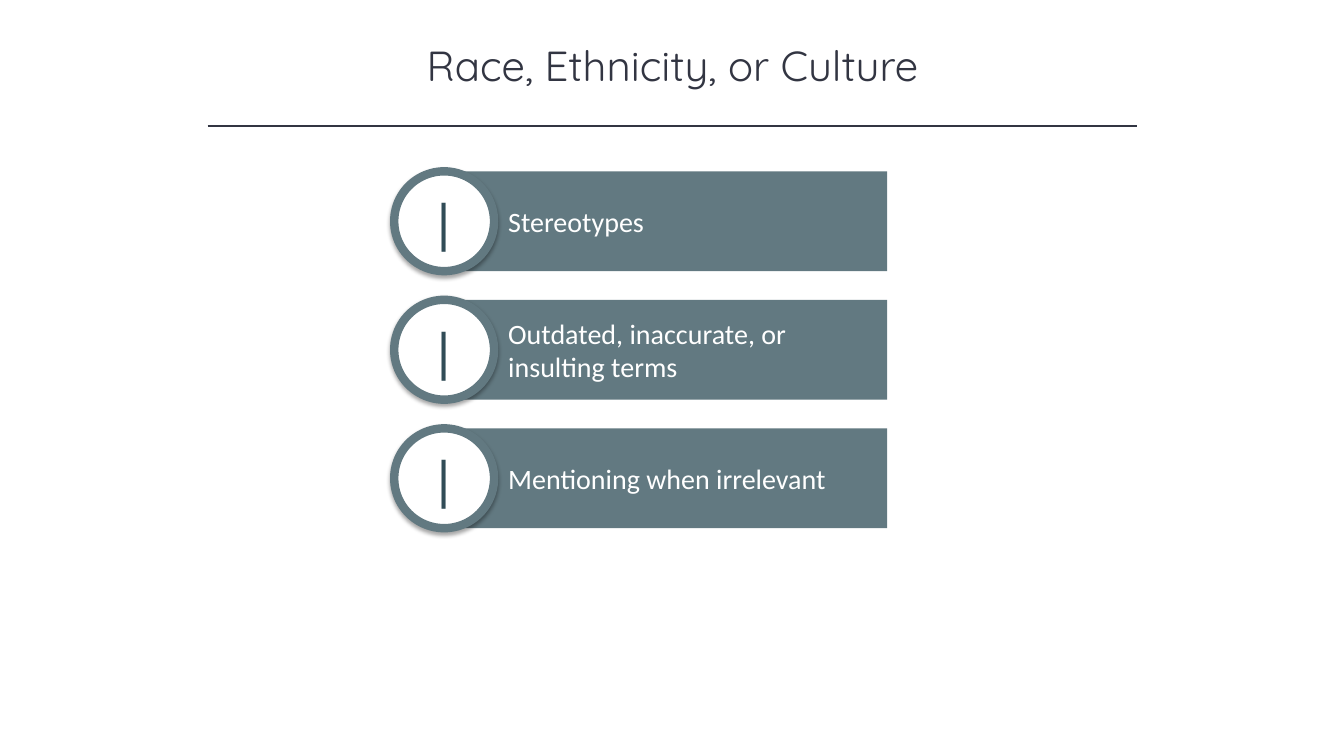
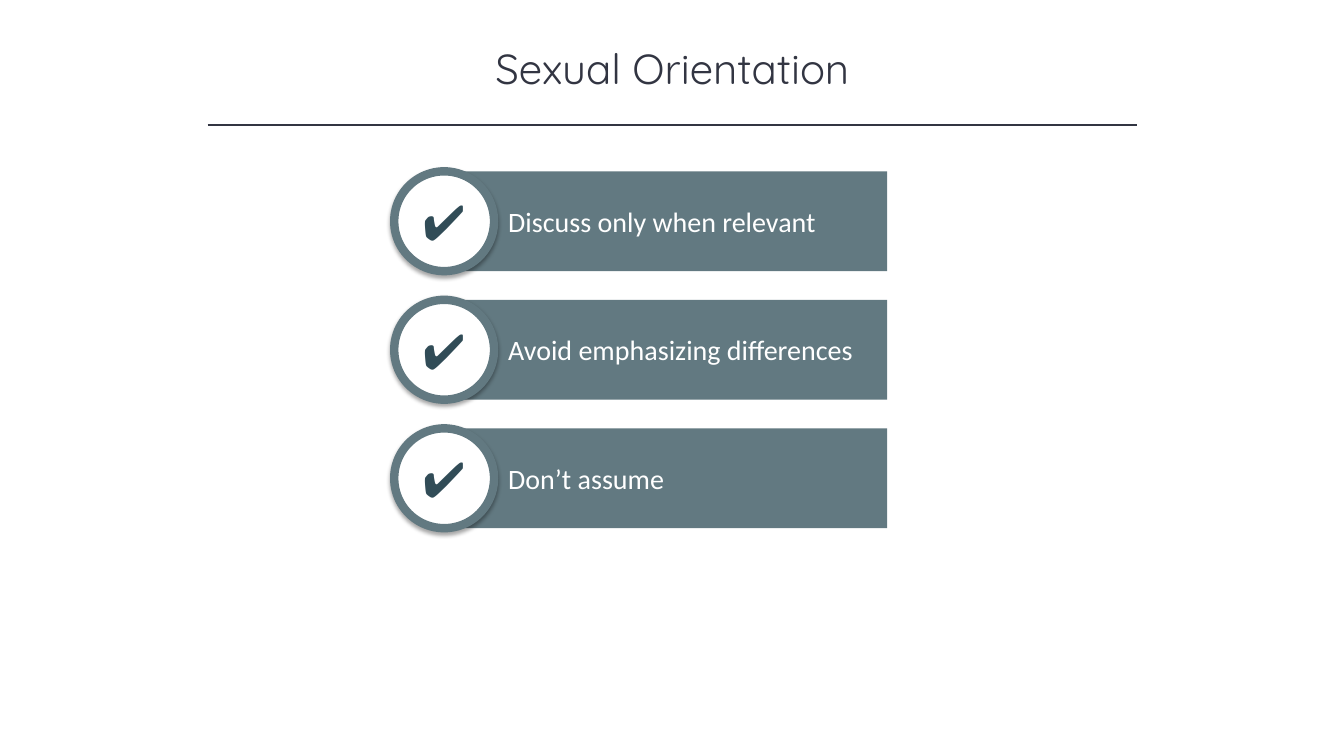
import pptx
import pptx.util
import pptx.dml.color
import pptx.enum.shapes
import pptx.enum.text
import pptx.oxml
import pptx.oxml.ns
from pptx.util import Inches, Pt

INK, SLATE, DEEP, WHITE = "323542", "627981", "314C57", "FFFFFF"
TITLE_FONT, BODY_FONT, MARK_FONT = "Quicksand", "Calibri", "Arial"

SLIDES = [
    {
        "title": "Race, Ethnicity, or Culture",
        "title_top": 0.34,
        "rule_y": 1.25,
        "mark": "❘",
        "points": [
            "Stereotypes",
            "Outdated, inaccurate, or insulting terms",
            "Mentioning when irrelevant",
        ],
    },
    {
        "title": "Sexual Orientation",
        "title_top": 0.37,
        "rule_y": 1.24,
        "mark": "✔",
        "points": [
            "Discuss only when relevant",
            "Avoid emphasizing differences",
            "Don’t assume",
        ],
    },
]

RULE_LEFT, RULE_RIGHT = 2.06, 11.28
BAND_LEFT, BAND_WIDTH = 4.54, 4.26
ROW_TOP, ROW_HEIGHT, ROW_PITCH = 1.7, 0.99, 1.275
BADGE_LEFT = 3.91

SHADOW = (
    '<a:effectLst xmlns:a="http://schemas.openxmlformats.org/drawingml/2006/main">'
    f'<a:outerShdw blurRad="{Pt(3.1)}" dist="{Pt(1.8)}" dir="5400000" rotWithShape="0">'
    '<a:srgbClr val="000000"><a:alpha val="35000"/></a:srgbClr>'
    "</a:outerShdw></a:effectLst>"
)

ALIGN = pptx.enum.text.PP_ALIGN
ANCHOR = pptx.enum.text.MSO_ANCHOR
PRESET = pptx.enum.shapes.MSO_SHAPE


def rgb(value):
    return pptx.dml.color.RGBColor.from_string(value)


def write(shape, text, font_name, size, color, align, anchor, bold=False):
    frame = shape.text_frame
    frame.text = text
    frame.word_wrap = True
    frame.vertical_anchor = anchor
    paragraph = frame.paragraphs[0]
    paragraph.alignment = align
    font = paragraph.font
    font.name, font.size, font.bold = font_name, Pt(size), bold
    font.color.rgb = rgb(color)


def add_heading(slide, text, top, rule_y):
    """Fill the title placeholder and draw the rule below it."""
    title = slide.shapes.title
    title.left, title.top = Inches(1.67), Inches(top)
    title.width, title.height = Inches(10), Inches(0.61)
    write(title, text, TITLE_FONT, 30, INK, ALIGN.CENTER, ANCHOR.TOP)
    title.text_frame.auto_size = pptx.enum.text.MSO_AUTO_SIZE.SHAPE_TO_FIT_TEXT

    rule = slide.shapes.add_connector(
        pptx.enum.shapes.MSO_CONNECTOR.STRAIGHT,
        Inches(RULE_LEFT), Inches(rule_y), Inches(RULE_RIGHT), Inches(rule_y))
    rule.line.color.rgb = rgb(INK)
    rule.line.width = Pt(1)
    properties = rule._element.spPr
    properties.append(properties.makeelement(pptx.oxml.ns.qn("a:effectLst"), {}))


def add_filled(slide, preset, left, top, width, fill):
    shape = slide.shapes.add_shape(
        preset, Inches(left), Inches(top), Inches(width), Inches(ROW_HEIGHT))
    shape.shadow.inherit = False
    shape.fill.solid()
    shape.fill.fore_color.rgb = rgb(fill)
    shape.line.fill.background()
    return shape


def add_point(slide, text, mark, top):
    """Draw one band with its round badge on the left end."""
    band = add_filled(slide, PRESET.RECTANGLE, BAND_LEFT, top, BAND_WIDTH, SLATE)
    band.text_frame.margin_left = Inches(0.5)
    write(band, text, BODY_FONT, 20, WHITE, ALIGN.LEFT, ANCHOR.MIDDLE)

    badge = add_filled(slide, PRESET.OVAL, BADGE_LEFT, top, ROW_HEIGHT, WHITE)
    badge.line.color.rgb = rgb(SLATE)
    badge.line.width = Pt(6)
    properties = badge._element.spPr
    properties.replace(properties.find(pptx.oxml.ns.qn("a:effectLst")),
                       pptx.oxml.parse_xml(SHADOW))
    write(badge, mark, MARK_FONT, 35, DEEP, ALIGN.CENTER, ANCHOR.MIDDLE, bold=True)


def main():
    deck = pptx.Presentation()
    deck.slide_width, deck.slide_height = Inches(13.33), Inches(7.5)
    title_only = deck.slide_layouts[5]
    for content in SLIDES:
        slide = deck.slides.add_slide(title_only)
        add_heading(slide, content["title"], content["title_top"], content["rule_y"])
        for row, text in enumerate(content["points"]):
            add_point(slide, text, content["mark"], ROW_TOP + row * ROW_PITCH)
    deck.save("out.pptx")


if __name__ == "__main__":
    main()
